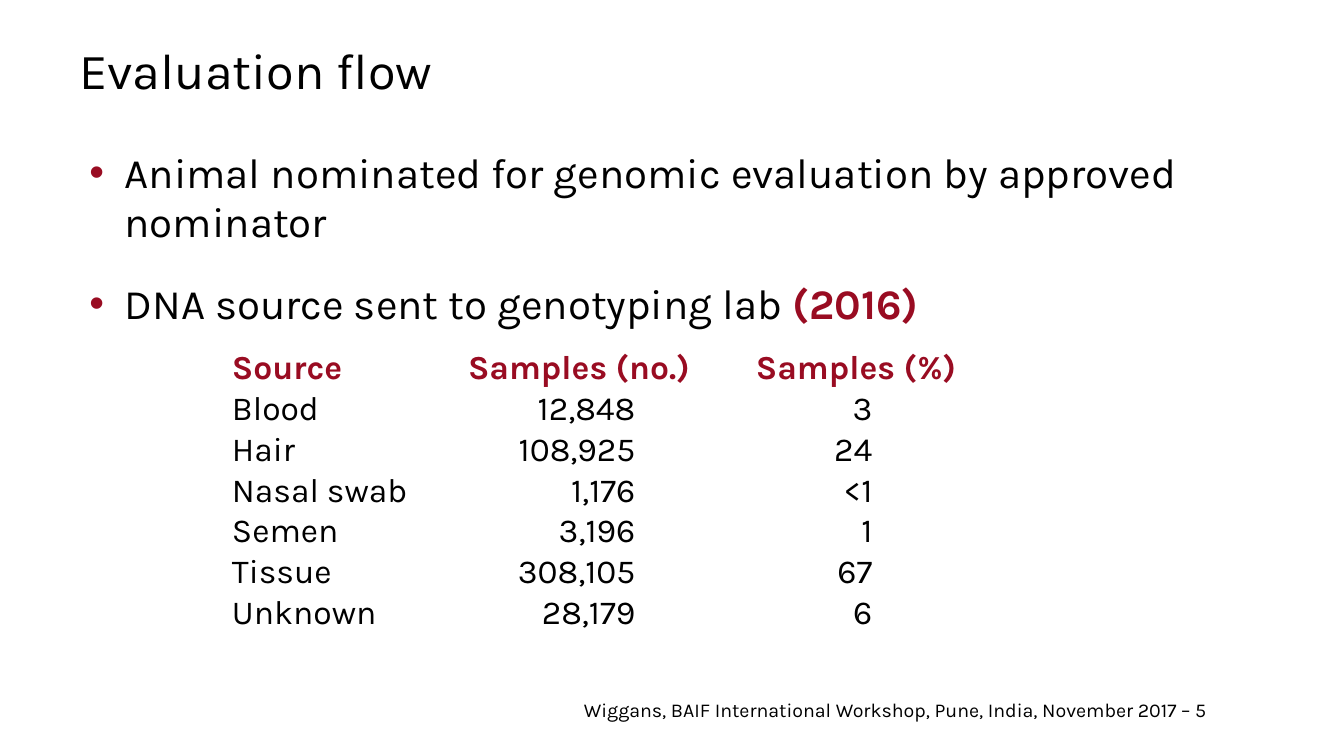
from dataclasses import dataclass

from lxml import etree
from pptx import Presentation
from pptx.dml.color import RGBColor
from pptx.enum.text import MSO_ANCHOR, MSO_AUTO_SIZE, PP_ALIGN
from pptx.oxml.ns import qn
from pptx.util import Pt

LEFT, CENTER, RIGHT = PP_ALIGN.LEFT, PP_ALIGN.CENTER, PP_ALIGN.RIGHT
TOP, MIDDLE, BOTTOM = MSO_ANCHOR.TOP, MSO_ANCHOR.MIDDLE, MSO_ANCHOR.BOTTOM
NO_AUTOFIT = MSO_AUTO_SIZE.NONE
TITLE_AND_CONTENT = 1
EMU_PER_PX = 9144  # 100 px to the inch


@dataclass(frozen=True)
class Theme:
    font: str = "Karla"
    ink: RGBColor = RGBColor(0x00, 0x00, 0x00)
    accent: RGBColor = RGBColor(0x99, 0x0C, 0x22)
    title: int = 72
    body: int = 60
    table: int = 48
    footer: int = 28


THEME = Theme()

SAMPLES = [
    ("Source", "Samples (no.)", "Samples (%)"),
    ("Blood", "12,848", "3"),
    ("Hair", "108,925", "24"),
    ("Nasal swab", "1,176", "<1"),
    ("Semen", "3,196", "1"),
    ("Tissue", "308,105", "67"),
    ("Unknown", "28,179", "6"),
]
COLUMN_WIDTHS = (416, 584, 515)
VALUE_RIGHT_MARGINS = (20, 180, 225)
ROW_HEIGHT = 81


def px(length):
    return round(length * EMU_PER_PX)


def style(font, size, color=THEME.ink, bold=False):
    font.name = THEME.font
    font.size = Pt(size)
    font.color.rgb = color
    font.bold = bold


def place(shape, left, top, width, height):
    shape.left, shape.top = px(left), px(top)
    shape.width, shape.height = px(width), px(height)


def set_margins(box, left, top, right, bottom):
    """Inset the text of a text frame or a table cell."""
    box.margin_left, box.margin_top = px(left), px(top)
    box.margin_right, box.margin_bottom = px(right), px(bottom)


def prepare_frame(shape, anchor):
    frame = shape.text_frame
    frame.word_wrap = True
    frame.auto_size = NO_AUTOFIT
    frame.vertical_anchor = anchor
    set_margins(frame, 24, 12, 24, 12)
    return frame


def add_title(slide, text):
    title = slide.shapes.title
    place(title, 133, 25, 2398, 225)
    paragraph = prepare_frame(title, MIDDLE).paragraphs[0]
    paragraph.text = text
    paragraph.alignment = LEFT
    style(paragraph.font, THEME.title)


def set_bullet(paragraph):
    properties = paragraph._p.get_or_add_pPr()
    properties.set("marL", str(px(90)))
    properties.set("indent", str(px(-70)))
    color = etree.SubElement(properties, qn("a:buClr"))
    etree.SubElement(color, qn("a:srgbClr"), val=str(THEME.accent))
    etree.SubElement(properties, qn("a:buChar"), char="•")


def add_bullets(slide, items):
    """Fill the body with (text, highlighted ending, space after) items."""
    body = slide.placeholders[1]
    place(body, 133, 281, 2398, 1015)
    frame = prepare_frame(body, TOP)
    for index, (text, highlight, space_after) in enumerate(items):
        paragraph = frame.add_paragraph() if index else frame.paragraphs[0]
        set_bullet(paragraph)
        paragraph.line_spacing = Pt(70)
        paragraph.space_before = Pt(0)
        paragraph.space_after = Pt(space_after)
        paragraph.add_run().text = text
        style(paragraph.font, THEME.body)
        if highlight:
            ending = paragraph.add_run()
            ending.text = highlight
            ending.font.color.rgb = THEME.accent
            ending.font.bold = True


def fill_cell(cell, text, is_header, column):
    cell.fill.background()
    cell.vertical_anchor = BOTTOM
    set_margins(cell, 20, 0, 20 if is_header else VALUE_RIGHT_MARGINS[column], 0)
    paragraph = cell.text_frame.paragraphs[0]
    paragraph.text = text
    paragraph.line_spacing = Pt(30 if is_header else 28)
    if column == 0:
        paragraph.alignment = LEFT
    else:
        paragraph.alignment = CENTER if is_header else RIGHT
    color = THEME.accent if is_header else THEME.ink
    style(paragraph.font, THEME.table, color, bold=is_header)


def add_sample_table(slide):
    table = slide.shapes.add_table(
        len(SAMPLES), len(COLUMN_WIDTHS), px(440), px(689),
        px(sum(COLUMN_WIDTHS)), px(ROW_HEIGHT * len(SAMPLES))).table
    table.first_row = False
    table.horz_banding = False
    for column, width in zip(table.columns, COLUMN_WIDTHS):
        column.width = px(width)
    for row_index, row in enumerate(SAMPLES):
        for column_index, text in enumerate(row):
            fill_cell(table.cell(row_index, column_index), text,
                      row_index == 0, column_index)


def add_footer(slide, text):
    footer = slide.shapes.add_textbox(px(1148), px(1379), px(1393), px(57))
    frame = footer.text_frame
    frame.word_wrap = True
    set_margins(frame, 10, 5, 10, 5)
    paragraph = frame.paragraphs[0]
    paragraph.text = text
    style(paragraph.font, THEME.footer)


def main():
    deck = Presentation()
    deck.slide_width, deck.slide_height = px(2665), px(1500)
    slide = deck.slides.add_slide(deck.slide_layouts[TITLE_AND_CONTENT])
    add_footer(slide, "Wiggans, BAIF International Workshop, Pune, India, November 2017 – 5")
    add_title(slide, "Evaluation flow")
    add_bullets(slide, [
        ("Animal nominated for genomic evaluation by approved nominator", "", 48),
        ("DNA source sent to genotyping lab ", "(2016)", 24),
    ])
    add_sample_table(slide)
    deck.save("out.pptx")


if __name__ == "__main__":
    main()
